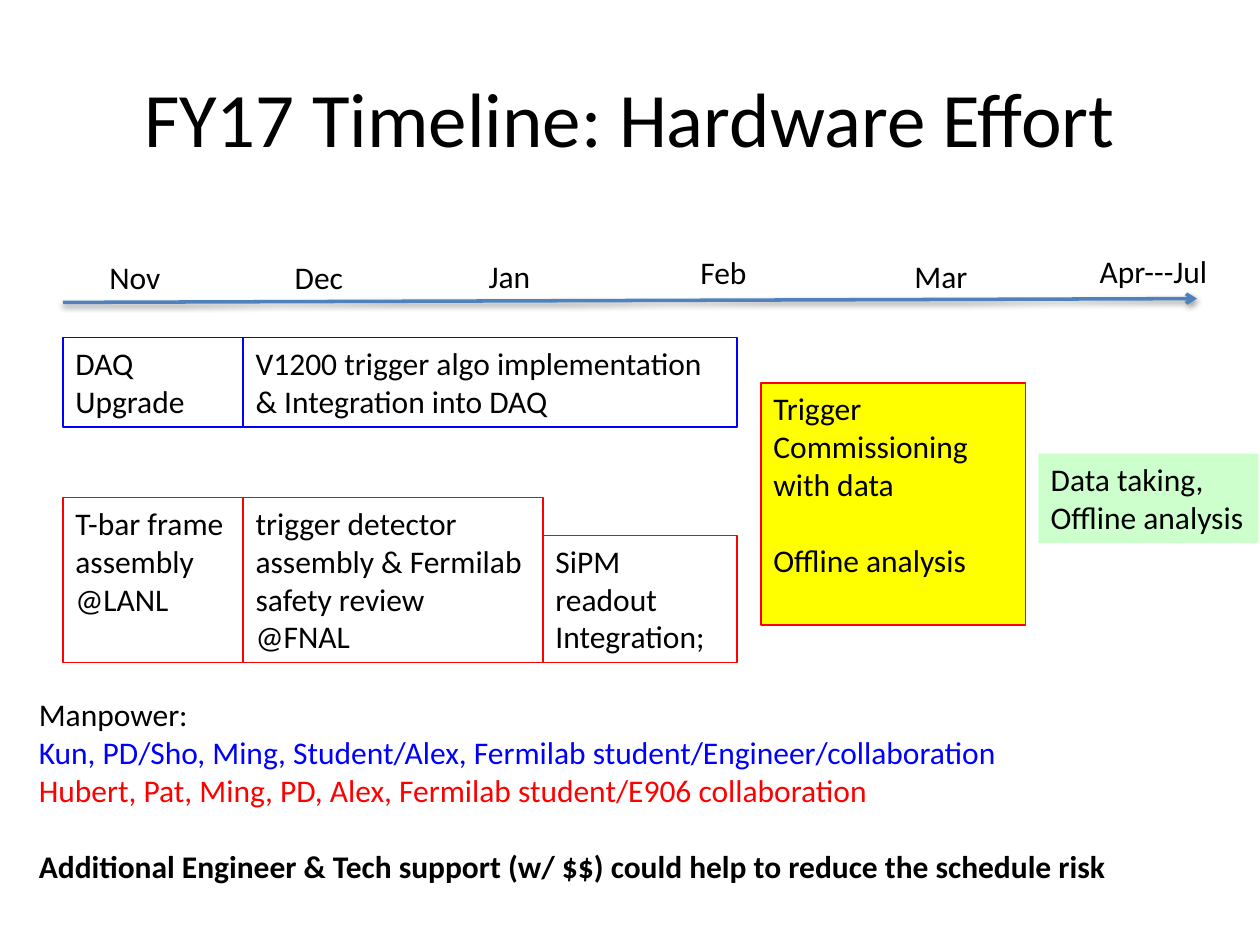
from lxml import etree
from pptx import Presentation
from pptx.dml.color import RGBColor
from pptx.enum.shapes import MSO_CONNECTOR, MSO_SHAPE
from pptx.enum.text import MSO_ANCHOR, MSO_AUTO_SIZE, PP_ALIGN
from pptx.oxml import parse_xml
from pptx.oxml.ns import nsdecls, qn
from pptx.util import Pt

PX = 9144  # 100 px to the inch
FONT = "Calibri"
BLANK_LINE = Pt(22)
COLORS = {
    "black": "000000",
    "axis": "4F81BD",
    "blue": "0000FF",
    "red": "FF0000",
    "yellow": "FFFF00",
    "green": "CCFFCC",
}


def rgb(name):
    return RGBColor.from_string(COLORS[name])


def write(frame, lines, wrap=True, size=18):
    """Fill a frame with (text, colour, bold, space before) lines."""
    frame.word_wrap = wrap
    for index, (text, color, bold, space) in enumerate(lines):
        paragraph = frame.paragraphs[0] if index == 0 else frame.add_paragraph()
        paragraph.alignment = PP_ALIGN.LEFT
        paragraph.space_before = space
        run = paragraph.add_run()
        run.text = text
        run.font.name = FONT
        run.font.size = Pt(size)
        run.font.bold = bold
        run.font.color.rgb = rgb(color)


prs = Presentation()
prs.slide_width, prs.slide_height = 1000 * PX, 750 * PX
slide = prs.slides.add_slide(prs.slide_layouts[5])
shapes = slide.shapes

# Title
title = shapes.title
title.left, title.top, title.width, title.height = (
    v * PX for v in (50, 30, 900, 125))
title.text_frame.vertical_anchor = MSO_ANCHOR.MIDDLE
write(title.text_frame, [("FY17 Timeline: Hardware Effort", "black", False, 0)], size=44)
title.text_frame.paragraphs[0].alignment = PP_ALIGN.CENTER

# Time axis
axis = shapes.add_connector(
    MSO_CONNECTOR.STRAIGHT, 50 * PX, 240 * PX, 950 * PX, 237 * PX)
axis.line.color.rgb = rgb("axis")
axis.line.width = Pt(2)
etree.SubElement(axis.line._get_or_add_ln(), qn("a:tailEnd"), type="arrow")
axis._element.spPr.append(parse_xml(
    f'<a:effectLst {nsdecls("a")}>'
    '<a:outerShdw blurRad="39370" dist="20320" dir="5400000" rotWithShape="0">'
    '<a:srgbClr val="000000"><a:alpha val="38000"/></a:srgbClr>'
    '</a:outerShdw></a:effectLst>'))

months = [
    ("Nov", 77, 200, 61),
    ("Dec", 224, 200, 59),
    ("Jan", 378, 199, 54),
    ("Feb", 546, 196, 58),
    ("Mar", 716, 199, 63),
    ("Apr---Jul", 863, 195, 107),
]
for month, left, top, width in months:
    label = shapes.add_textbox(left * PX, top * PX, width * PX, 40 * PX)
    write(label.text_frame, [(month, "black", False, 0)], wrap=False)
    label.text_frame.auto_size = MSO_AUTO_SIZE.SHAPE_TO_FIT_TEXT

# Tasks: position, fill, outline, wrap, lines with their space before
tasks = [
    ((50, 268, 143, 71), None, "blue", True, [("DAQ", 0), ("Upgrade", 0)]),
    ((193, 268, 392, 71), None, "blue", True,
     [("V1200 trigger algo implementation & Integration into DAQ", 0)]),
    ((50, 395, 143, 131), None, "red", True,
     [("T-bar frame assembly", 0), ("@LANL", 0)]),
    ((193, 395, 238, 131), None, "red", True,
     [("trigger detector assembly & Fermilab safety review", 0), ("@FNAL", 0)]),
    ((431, 425, 154, 101), None, "red", True,
     [("SiPM readout", 0), ("Integration;", 0)]),
    ((604, 304, 210, 192), "yellow", "red", True,
     [("Trigger", 0), ("Commissioning with data", 0),
      ("Offline analysis", BLANK_LINE)]),
    ((824, 360, 175, 71), "green", None, False,
     [("Data taking,", 0), ("Offline analysis", 0)]),
]
for position, fill, outline, wrap, lines in tasks:
    task = shapes.add_shape(MSO_SHAPE.RECTANGLE, *(v * PX for v in position))
    task.shadow.inherit = False
    if fill:
        task.fill.solid()
        task.fill.fore_color.rgb = rgb(fill)
    else:
        task.fill.background()
    if outline:
        task.line.color.rgb = rgb(outline)
        task.line.width = Pt(0.75)
    else:
        task.line.fill.background()
    task.text_frame.vertical_anchor = MSO_ANCHOR.TOP
    write(task.text_frame,
          [(text, "black", False, space) for text, space in lines], wrap)

# Manpower
manpower = shapes.add_textbox(21 * PX, 547 * PX, 899 * PX, 162 * PX)
write(manpower.text_frame, [
    ("Manpower:", "black", False, 0),
    ("Kun, PD/Sho, Ming, Student/Alex, Fermilab student/Engineer/collaboration",
     "blue", False, 0),
    ("Hubert, Pat, Ming, PD, Alex, Fermilab student/E906 collaboration",
     "red", False, 0),
    ("Additional Engineer & Tech support (w/ $$) could help to reduce the schedule risk",
     "black", True, BLANK_LINE),
], wrap=False)

prs.save("out.pptx")
